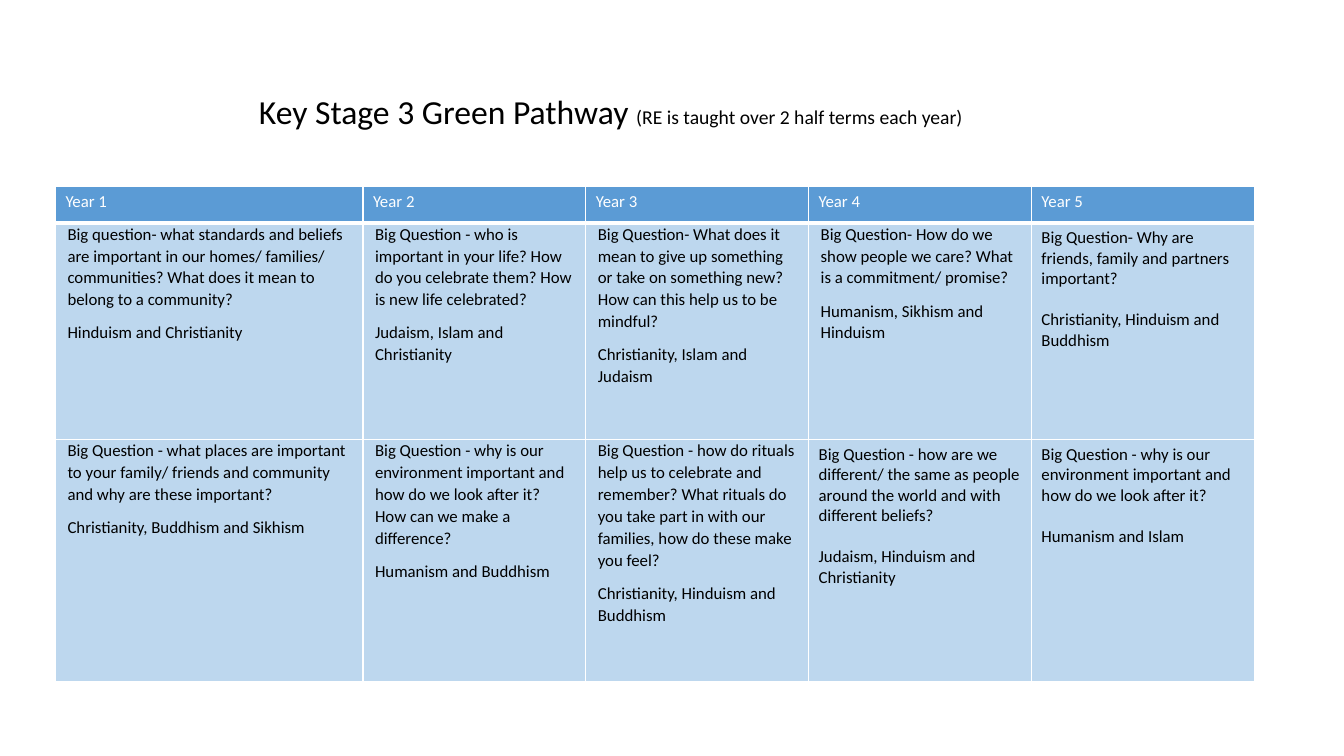
from lxml.etree import SubElement
from pptx import Presentation
from pptx.dml.color import RGBColor
from pptx.enum.text import MSO_ANCHOR
from pptx.oxml.ns import qn
from pptx.util import Inches, Pt

FONT = "Calibri"
BLACK, WHITE = "000000", "FFFFFF"
HEADER_BLUE, BODY_BLUE = "5B9BD5", "BDD7EE"
COLUMN_WIDTHS = [3.05] + [2.21] * 4
ROW_HEIGHTS = [0.36, 2.15, 2.4]
YEARS = [f"Year {number}" for number in range(1, 6)]
TOPICS = [
    [
        ("Big question- what standards and beliefs are important in our homes/ families/ "
         "communities? What does it mean to belong to a community?",
         "Hinduism and Christianity"),
        ("Big Question - who is important in your life? How do you celebrate them? "
         "How is new life celebrated?",
         "Judaism, Islam and Christianity"),
        ("Big Question- What does it mean to give up something or take on something new? "
         "How can this help us to be mindful?",
         "Christianity, Islam and Judaism"),
        ("Big Question- How do we show people we care? What is a commitment/ promise?",
         "Humanism, Sikhism and Hinduism"),
        ("Big Question- Why are friends, family and partners important?",
         "Christianity, Hinduism and Buddhism"),
    ],
    [
        ("Big Question - what places are important to your family/ friends and community "
         "and why are these important?",
         "Christianity, Buddhism and Sikhism"),
        ("Big Question - why is our environment important and how do we look after it? "
         "How can we make a difference?",
         "Humanism and Buddhism"),
        ("Big Question - how do rituals help us to celebrate and remember? What rituals do you "
         "take part in with our families, how do these make you feel?",
         "Christianity, Hinduism and Buddhism"),
        ("Big Question - how are we different/ the same as people around the world "
         "and with different beliefs?",
         "Judaism, Hinduism and Christianity"),
        ("Big Question - why is our environment important and how do we look after it?",
         "Humanism and Islam"),
    ],
]
SINGLE_SPACED = {(1, 4), (2, 3), (2, 4)}


def color(value):
    """Turn a hex string into a colour."""
    return RGBColor.from_string(value)


def style_font(font, size, value):
    """Set the typeface, size and colour of a font."""
    font.name = FONT
    font.size = Pt(size)
    font.bold = False
    font.color.rgb = color(value)


def add_title(slide, parts):
    """Add the title line from pairs of text and size."""
    box = slide.shapes.add_textbox(Inches(2.47), Inches(0.4), Inches(8.4), Inches(1.45))
    frame = box.text_frame
    frame.word_wrap = True
    frame.vertical_anchor = MSO_ANCHOR.MIDDLE
    paragraph = frame.paragraphs[0]
    paragraph.line_spacing = 0.9
    for text, size in parts:
        run = paragraph.add_run()
        run.text = text
        style_font(run.font, size, BLACK)


def add_borders(cell, bottom_width):
    """Draw white lines around a cell."""
    properties = cell._tc.get_or_add_tcPr()
    for side, width in (("L", 1), ("R", 1), ("T", 1), ("B", bottom_width)):
        line = SubElement(properties, qn(f"a:ln{side}"), w=str(Pt(width)))
        SubElement(SubElement(line, qn("a:solidFill")), qn("a:srgbClr"), val=WHITE)


def fill_cell(cell, texts, fill, text_color, bottom_width=1):
    """Write paragraphs into a cell and set its colours and borders."""
    add_borders(cell, bottom_width)
    cell.fill.solid()
    cell.fill.fore_color.rgb = color(fill)
    cell.text_frame.text = "\n".join(texts)
    for paragraph in cell.text_frame.paragraphs:
        style_font(paragraph.runs[0].font, 12, text_color)


def space_topic(cell, single_spaced):
    """Set the margins and paragraph spacing of a topic cell."""
    paragraphs = cell.text_frame.paragraphs
    if single_spaced:
        paragraphs[0].space_after = Pt(14.65)
        return
    cell.margin_left = cell.margin_right = Inches(0.12)
    cell.margin_top = cell.margin_bottom = Inches(0)
    for paragraph in paragraphs:
        paragraph.line_spacing = 1.07
        paragraph.space_after = Pt(8)


def add_pathway_table(slide):
    """Add the table of years and topics."""
    frame = slide.shapes.add_table(
        len(ROW_HEIGHTS), len(COLUMN_WIDTHS), Inches(0.55), Inches(1.85),
        Inches(sum(COLUMN_WIDTHS)), Inches(sum(ROW_HEIGHTS)))
    table = frame.table
    table.horz_banding = False
    for column, width in zip(table.columns, COLUMN_WIDTHS):
        column.width = Inches(width)
    for row, height in zip(table.rows, ROW_HEIGHTS):
        row.height = Inches(height)
    for index, year in enumerate(YEARS):
        fill_cell(table.cell(0, index), [year], HEADER_BLUE, WHITE, bottom_width=3)
    for row_index, topics in enumerate(TOPICS, start=1):
        for index, topic in enumerate(topics):
            cell = table.cell(row_index, index)
            fill_cell(cell, topic, BODY_BLUE, BLACK)
            space_topic(cell, (row_index, index) in SINGLE_SPACED)


def main():
    """Build the slide and save it."""
    presentation = Presentation()
    presentation.slide_width = Inches(13.33)
    presentation.slide_height = Inches(7.5)
    slide = presentation.slides.add_slide(presentation.slide_layouts[6])
    add_pathway_table(slide)
    add_title(slide, [("Key Stage 3 Green Pathway ", 24),
                      ("(RE is taught over 2 half terms each year)", 14)])
    presentation.save("out.pptx")


if __name__ == "__main__":
    main()
